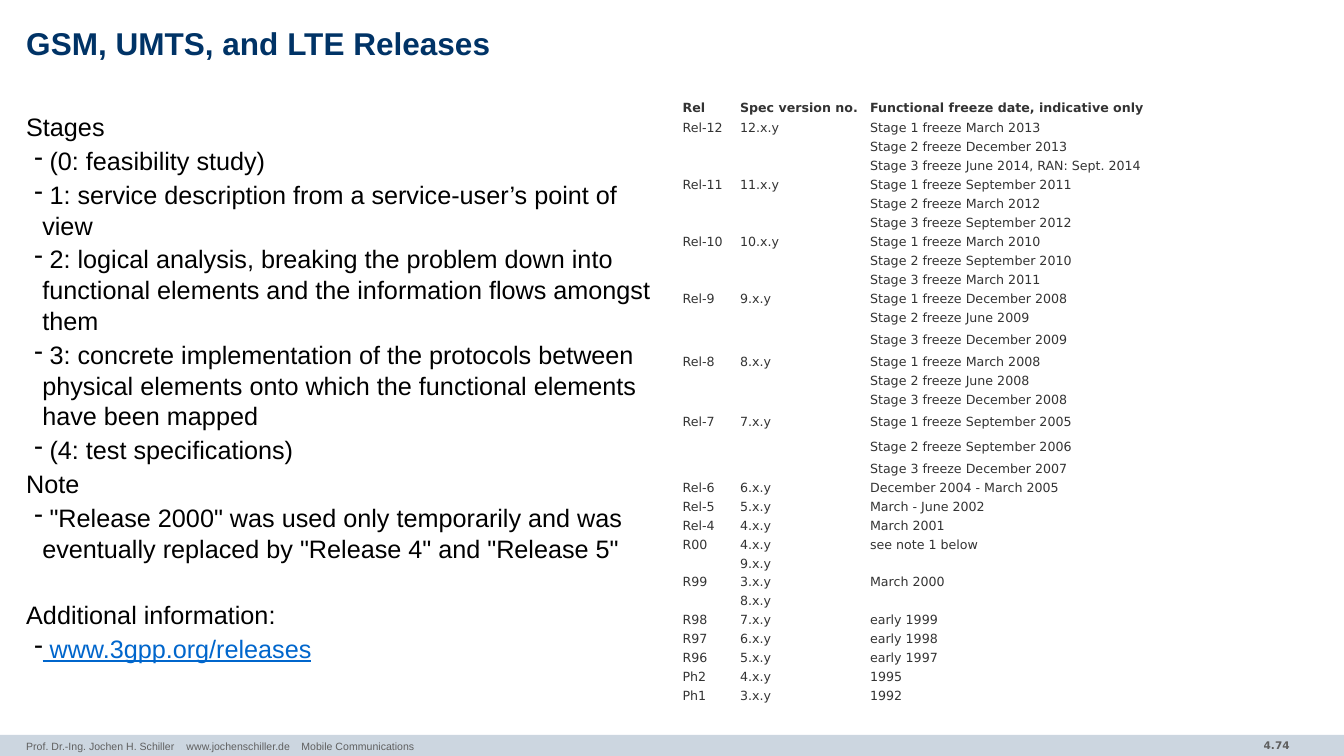
from itertools import zip_longest

from lxml.etree import SubElement
from pptx import Presentation
from pptx.dml.color import RGBColor
from pptx.enum.shapes import MSO_SHAPE
from pptx.enum.text import MSO_ANCHOR as Anchor, PP_ALIGN as Align
from pptx.oxml.ns import qn
from pptx.util import Inches, Pt

SLIDE_WIDTH, SLIDE_HEIGHT = 13.33, 7.5
MARGIN = 0.26
BODY_FONT, TABLE_FONT = "Arial", "DejaVu Sans"
GREY = "5F5F5F"

TITLE = "GSM, UMTS, and LTE Releases"
FOOTER = ["Prof. Dr.-Ing. Jochen H. Schiller", "www.jochenschiller.de", "Mobile Communications"]
FOOTER_TABS = [1.59, 2.73]

# Heading, space before it in points, items
SECTIONS = [
    ("Stages", 0, [
        "(0: feasibility study)",
        "1: service description from a service-user’s point of view",
        "2: logical analysis, breaking the problem down into functional elements "
        "and the information flows amongst them",
        "3: concrete implementation of the protocols between physical elements "
        "onto which the functional elements have been mapped",
        "(4: test specifications)",
    ]),
    ("Note", 2.1, [
        '"Release 2000" was used only temporarily and was eventually replaced by '
        '"Release 4" and "Release 5"',
    ]),
    ("Additional information:", 25.3, ["www.3gpp.org/releases"]),
]

HEADER = ("Rel", "Spec version no.", "Functional freeze date, indicative only")
STAGED_RELEASES = [
    ("Rel-12", "12.x.y", ["March 2013", "December 2013", "June 2014, RAN: Sept. 2014"]),
    ("Rel-11", "11.x.y", ["September 2011", "March 2012", "September 2012"]),
    ("Rel-10", "10.x.y", ["March 2010", "September 2010", "March 2011"]),
    ("Rel-9", "9.x.y", ["December 2008", "June 2009", "December 2009"]),
    ("Rel-8", "8.x.y", ["March 2008", "June 2008", "December 2008"]),
    ("Rel-7", "7.x.y", ["September 2005", "September 2006", "December 2007"]),
]
EARLY_RELEASES = [
    ("Rel-6", ["6.x.y"], "December 2004 - March 2005"),
    ("Rel-5", ["5.x.y"], "March - June 2002"),
    ("Rel-4", ["4.x.y"], "March 2001"),
    ("R00", ["4.x.y", "9.x.y"], "see note 1 below"),
    ("R99", ["3.x.y", "8.x.y"], "March 2000"),
    ("R98", ["7.x.y"], "early 1999"),
    ("R97", ["6.x.y"], "early 1998"),
    ("R96", ["5.x.y"], "early 1997"),
    ("Ph2", ["4.x.y"], "1995"),
    ("Ph1", ["3.x.y"], "1992"),
]
COLUMN_WIDTHS = [0.57, 1.29, 2.94]
HEADER_HEIGHT, ROW_HEIGHT, TALL_HEIGHT = 0.21, 0.18, 0.25
TALL_ROWS = {12, 16, 17}


def color(value):
    return RGBColor.from_string(value)


def set_font(paragraph, name, size, value, bold=False):
    font = paragraph.font
    font.name, font.size, font.bold = name, Pt(size), bold
    font.color.rgb = color(value)


def add_text_box(slide, box, anchor=Anchor.TOP, side=0, edge=0):
    frame = slide.shapes.add_textbox(*map(Inches, box)).text_frame
    frame.word_wrap = True
    frame.vertical_anchor = anchor
    frame.margin_left = frame.margin_right = Inches(side)
    frame.margin_top = frame.margin_bottom = Inches(edge)
    return frame


def add_dash(paragraph):
    """Give the paragraph a black dash and a hanging indent."""
    properties = paragraph._p.get_or_add_pPr()
    properties.set("marL", str(Inches(0.16)))
    properties.set("indent", str(Inches(-0.08)))
    bullet_color = SubElement(properties, qn("a:buClr"))
    SubElement(bullet_color, qn("a:srgbClr"), val="000000")
    SubElement(properties, qn("a:buChar"), char="-")


def add_title(slide, box):
    paragraph = add_text_box(slide, box, Anchor.MIDDLE).paragraphs[0]
    paragraph.text = TITLE
    paragraph.line_spacing = 0.85
    set_font(paragraph, BODY_FONT, 22.5, "003366", bold=True)


def add_outline(slide, box):
    frame = add_text_box(slide, box)
    paragraph = frame.paragraphs[0]
    for heading, space, items in SECTIONS:
        if heading != SECTIONS[0][0]:
            paragraph = frame.add_paragraph()
        paragraph.text = heading
        paragraph.line_spacing, paragraph.space_before = 1.02, Pt(space)
        set_font(paragraph, BODY_FONT, 18, "000000")
        for item in items:
            is_link = item.startswith("www.")
            paragraph = frame.add_paragraph()
            paragraph.text = f" {item}"
            paragraph.line_spacing, paragraph.space_before = 1.02, Pt(2.1)
            add_dash(paragraph)
            set_font(paragraph, BODY_FONT, 18, "0066CC" if is_link else "000000")
            paragraph.font.underline = is_link


def release_rows():
    rows = [HEADER]
    for release, version, dates in STAGED_RELEASES:
        stages = [f"Stage {number} freeze {date}" for number, date in enumerate(dates, 1)]
        rows += zip_longest([release], [version], stages, fillvalue="")
    for release, versions, date in EARLY_RELEASES:
        rows += zip_longest([release], versions, [date], fillvalue="")
    return rows


def fill_cell(cell, text, bold):
    cell.fill.background()
    cell.vertical_anchor = Anchor.MIDDLE
    cell.margin_left = cell.margin_right = Inches(0.03)
    cell.margin_top = cell.margin_bottom = Pt(1.35)
    paragraph = cell.text_frame.paragraphs[0]
    if text:
        paragraph.text = text
    set_font(paragraph, TABLE_FONT, 9, "333333", bold)
    if not text:
        SubElement(paragraph._p, qn("a:endParaRPr"), sz="900")


def add_release_table(slide, left, top):
    rows = release_rows()
    heights = [TALL_HEIGHT if index in TALL_ROWS else ROW_HEIGHT for index in range(len(rows))]
    heights[0] = HEADER_HEIGHT
    box = (left, top, sum(COLUMN_WIDTHS), sum(heights))
    table = slide.shapes.add_table(len(rows), len(HEADER), *map(Inches, box)).table
    table.first_row = table.horz_banding = False
    for column, width in zip(table.columns, COLUMN_WIDTHS):
        column.width = Inches(width)
    for index, (row, height, texts) in enumerate(zip(table.rows, heights, rows)):
        row.height = Inches(height)
        for cell, text in zip(row.cells, texts):
            fill_cell(cell, text, bold=index == 0)


def add_footer(slide, top):
    box = (0, top, SLIDE_WIDTH, SLIDE_HEIGHT - top)
    bar = slide.shapes.add_shape(MSO_SHAPE.RECTANGLE, *map(Inches, box))
    bar.shadow.inherit = False
    bar.fill.solid()
    bar.fill.fore_color.rgb = color("CCD6E0")
    bar.line.fill.background()

    number = add_text_box(slide, (11.1, top - 0.01, 1.79, 0.23), Anchor.MIDDLE, 0.1).paragraphs[0]
    number.text = "4.74"
    number.alignment = Align.RIGHT
    set_font(number, TABLE_FONT, 7.5, GREY, bold=True)

    credit = add_text_box(slide, (MARGIN, top, 10.5, 0.21), edge=0.05).paragraphs[0]
    credit.text = "\t".join(FOOTER)
    tabs = SubElement(credit._p.get_or_add_pPr(), qn("a:tabLst"))
    for position in FOOTER_TABS:
        SubElement(tabs, qn("a:tab"), pos=str(Inches(position)), algn="l")
    set_font(credit, BODY_FONT, 7.5, GREY)


def main():
    presentation = Presentation()
    presentation.slide_width = Inches(SLIDE_WIDTH)
    presentation.slide_height = Inches(SLIDE_HEIGHT)
    slide = presentation.slides.add_slide(presentation.slide_layouts[6])
    add_footer(slide, 7.29)
    add_title(slide, (MARGIN, 0, 8.82, 0.91))
    add_outline(slide, (MARGIN, 1.1, 6.29, 5.82))
    add_release_table(slide, 6.74, 0.97)
    presentation.save("out.pptx")


if __name__ == "__main__":
    main()
